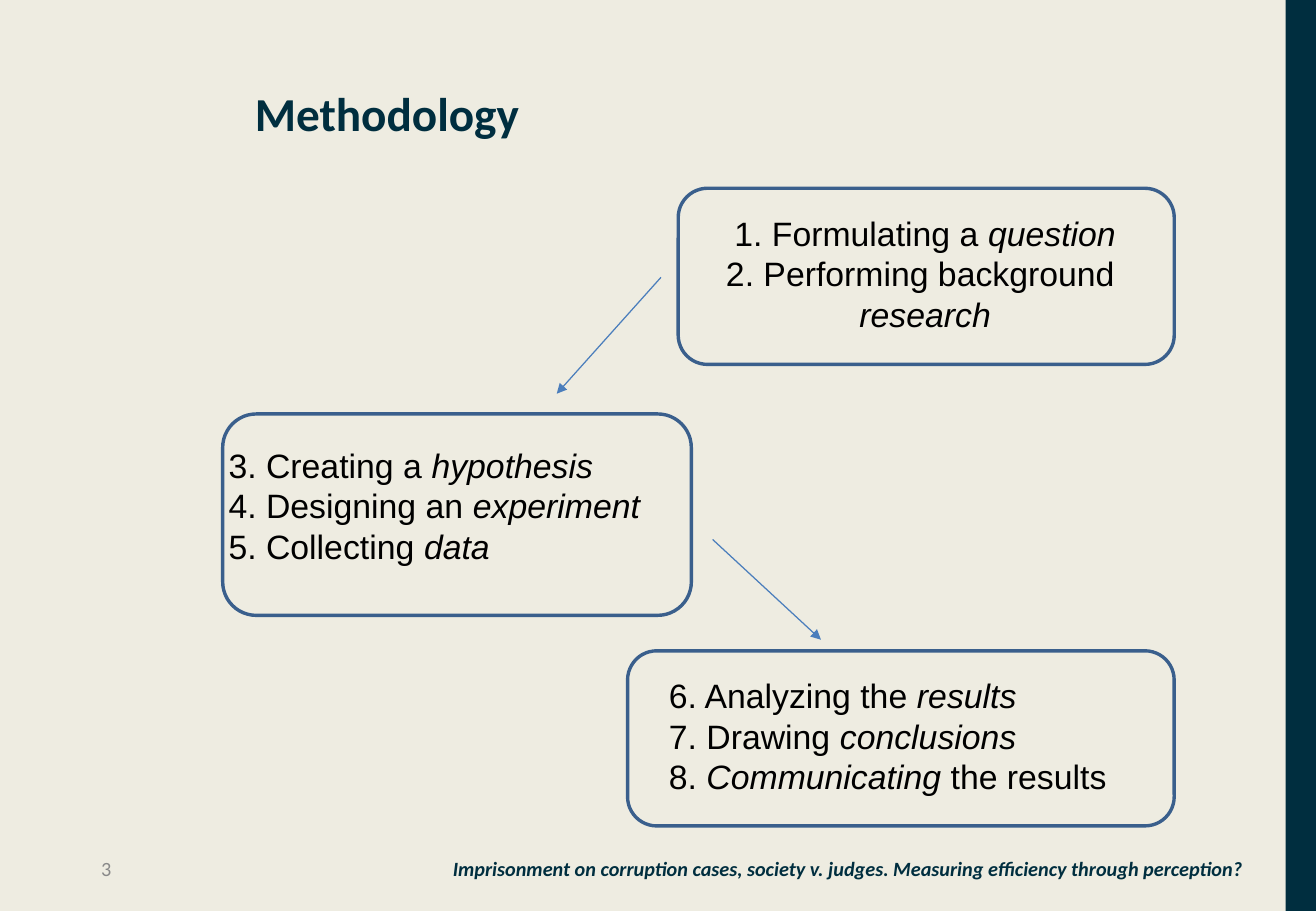
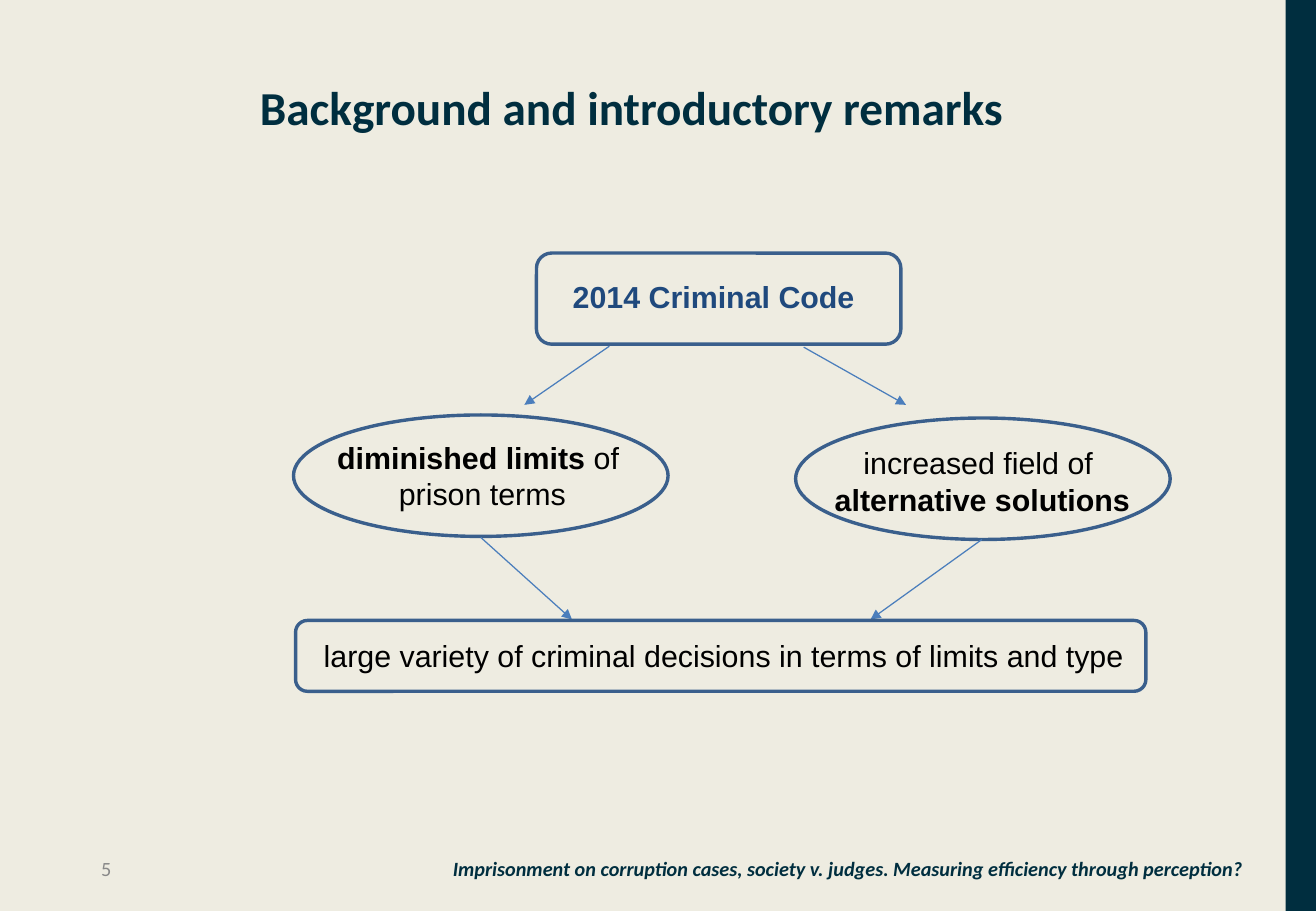
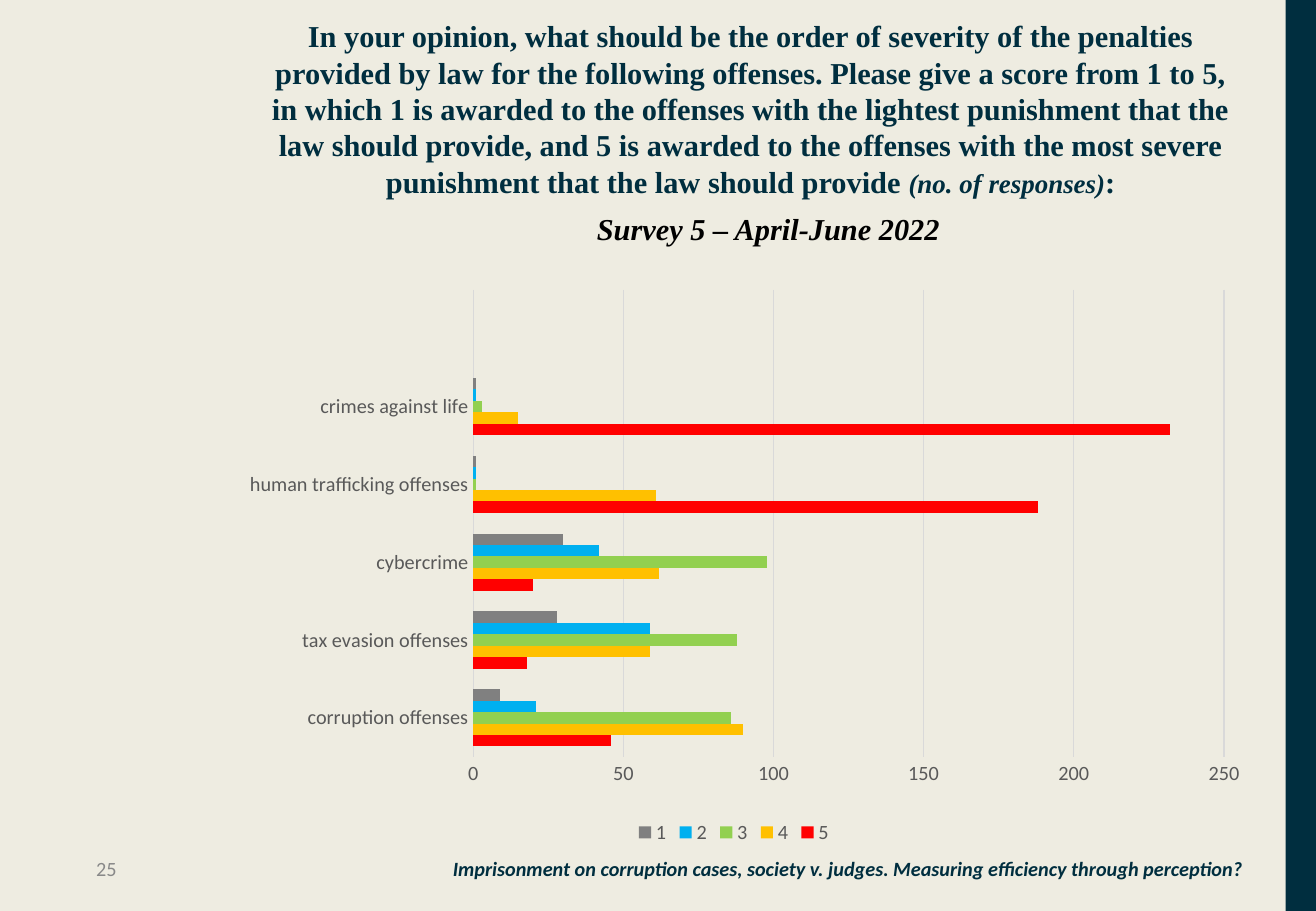
import pptx
import pptx.util
import pptx.chart.data
import pptx.dml.color
import pptx.enum.chart
import pptx.enum.shapes
import pptx.enum.text
import pptx.oxml.ns
import pptx.oxml.xmlchemy

RGB = pptx.dml.color.RGBColor
SAND = RGB(0xEE, 0xEC, 0xE1)
NAVY = RGB(0x00, 0x2E, 0x3F)
STEEL = RGB(0x3A, 0x5F, 0x8C)
BLUE = RGB(0x4B, 0x7E, 0xBC)
INK = RGB(0x1F, 0x49, 0x7D)
BLACK = RGB(0x00, 0x00, 0x00)
GREY = RGB(0x89, 0x89, 0x89)
SLATE = RGB(0x59, 0x59, 0x59)
PALE = RGB(0xD9, 0xD9, 0xD9)
RED = RGB(0xFF, 0x00, 0x00)
GOLD = RGB(0xFF, 0xC0, 0x00)
GREEN = RGB(0x92, 0xD0, 0x50)
SKY = RGB(0x00, 0xB0, 0xF0)
ASH = RGB(0x80, 0x80, 0x80)

SANS, BODY, SERIF = "Calibri", "Arial", "Times New Roman"
COLS, ROWS = 130, 90
CELL = pptx.util.Inches(1) // 12
FOOT = ("Imprisonment on corruption cases, society v. judges. "
        "Measuring efficiency through perception?")

Pt = pptx.util.Pt
SHAPE = pptx.enum.shapes.MSO_SHAPE
ALIGN = pptx.enum.text.PP_ALIGN
ANCHOR = pptx.enum.text.MSO_ANCHOR
qn = pptx.oxml.ns.qn
node = pptx.oxml.xmlchemy.OxmlElement


def grid(*cells):
    return [round(n * CELL) for n in cells]


class Deck:
    """Shared style and the current slide; lengths are grid cells."""

    def __init__(self):
        self.prs = pptx.Presentation()
        self.prs.slide_width, self.prs.slide_height = grid(COLS, ROWS)
        back = self.prs.slide_master.background.fill
        back.solid()
        back.fore_color.rgb = SAND

    def page(self, num):
        """Start a slide with its side band, number and footer."""
        self.slide = self.prs.slides.add_slide(self.prs.slide_layouts[6])
        self.shapes = self.slide.shapes
        band = self.shapes.add_shape(SHAPE.RECTANGLE, *grid(COLS - 3, 0, 3, ROWS))
        band.shadow.inherit = False
        band.fill.solid()
        band.fill.fore_color.rgb = NAVY
        band.line.fill.background()
        low = dict(size=12, font=SANS, mid=True, wrap=True)
        self.text((0, 83.4, 21, 4.8), [[(str(num), "")]],
                  color=GREY, align=ALIGN.CENTER, **low)
        self.text((24, 83.4, 100, 4.8), [[(FOOT, "bi")]],
                  color=NAVY, align=ALIGN.RIGHT, **low)

    def text(self, box, paras, size=18, font=BODY, color=BLACK,
             align=ALIGN.LEFT, mid=False, wrap=False):
        """Add paragraphs of runs (words, marks, own size if any)."""
        frame = self.shapes.add_textbox(*grid(*box)).text_frame
        frame.word_wrap = wrap
        frame.vertical_anchor = ANCHOR.MIDDLE if mid else ANCHOR.TOP
        for i, runs in enumerate(paras):
            para = frame.add_paragraph() if i else frame.paragraphs[0]
            para.alignment = align
            for words, marks, *own in runs:
                run = para.add_run()
                run.text = words
                self.style(run.font, own[0] if own else size, color, font)
                run.font.bold = "b" in marks
                run.font.italic = "i" in marks

    def style(self, face, size, color, font=SANS):
        face.size, face.name = Pt(size), font
        face.color.rgb = color

    def title(self, left, top, runs, size=28, font=SANS, align=ALIGN.LEFT):
        self.text((left, top, 99.5, 15), [runs], size, font, NAVY, align,
                  mid=True, wrap=True)

    def frame(self, box, kind=SHAPE.ROUNDED_RECTANGLE):
        """Add an unfilled outline."""
        shape = self.shapes.add_shape(kind, *grid(*box))
        shape.shadow.inherit = False
        shape.fill.background()
        shape.line.color.rgb = STEEL
        shape.line.width = Pt(2)

    def arrow(self, *ends):
        line = self.shapes.add_connector(
            pptx.enum.shapes.MSO_CONNECTOR.STRAIGHT, *grid(*ends))
        line.line.color.rgb = BLUE
        line.line.width = Pt(0.75)
        tip = node("a:tailEnd")
        tip.set("type", "triangle")
        props = line._element.spPr
        props.find(qn("a:ln")).append(tip)
        props.append(node("a:effectLst"))

    def bars(self, box, cats, rows, plot):
        """Add a bar chart; rows hold (name, color, values)."""
        data = pptx.chart.data.CategoryChartData()
        data.categories = cats
        for name, _, vals in rows:
            data.add_series(name, vals)
        chart = self.shapes.add_chart(
            pptx.enum.chart.XL_CHART_TYPE.BAR_CLUSTERED, *grid(*box), data).chart
        self.style(chart.font, 10, BLACK)
        chart.has_title = False
        chart.has_legend = True
        chart.legend.position = pptx.enum.chart.XL_LEGEND_POSITION.BOTTOM
        chart.legend.include_in_layout = False
        self.style(chart.legend.font, 12, SLATE)
        for axis in (chart.category_axis, chart.value_axis):
            self.style(axis.tick_labels.font, 12, SLATE)
            axis.major_tick_mark = pptx.enum.chart.XL_TICK_MARK.NONE
            axis.minor_tick_mark = pptx.enum.chart.XL_TICK_MARK.NONE
        chart.category_axis.has_major_gridlines = False
        chart.value_axis.has_major_gridlines = True
        for line in (chart.category_axis.format.line,
                     chart.value_axis.major_gridlines.format.line):
            line.color.rgb = PALE
            line.width = Pt(0.75)
        chart.value_axis.format.line.fill.background()
        group = chart.plots[0]
        group.gap_width = 182
        group.vary_by_categories = False
        for part, (_, color, _) in zip(group.series, rows):
            part.format.fill.solid()
            part.format.fill.fore_color.rgb = color
        self.place(chart, plot)

    def place(self, chart, plot):
        """Fix the inner plot area as shares of the chart."""
        area = chart._chartSpace.find(".//" + qn("c:plotArea"))
        for old in area.findall(qn("c:layout")):
            area.remove(old)
        lay = node("c:layout")
        man = node("c:manualLayout")
        lay.append(man)
        tags = ("layoutTarget", "xMode", "yMode", "x", "y", "w", "h")
        for tag, val in zip(tags, ("inner", "edge", "edge", *plot)):
            item = node("c:" + tag)
            item.set("val", str(val))
            man.append(item)
        area.insert(0, lay)


def method(deck):
    deck.page(3)
    deck.title(24, 3.6, [("Methodology", "b")])
    steps = [
        ((67, 18.6, 49, 17.4), (70.4, 20.4, 42, 16.9), ALIGN.CENTER,
         [[("1. Formulating a ", ""), ("question", "i")],
          [("2. Performing background ", "")],
          [("research", "i")]]),
        ((22, 40.9, 46.3, 19.9), (21.4, 43.3, 47.8, 16.9), ALIGN.LEFT,
         [[("3. Creating a ", ""), ("hypothesis", "i")],
          [("4. Designing an ", ""), ("experiment", "i")],
          [("5. Collecting ", ""), ("data", "i")]]),
        ((62, 64.3, 54, 17.3), (64.9, 66.1, 50.6, 16.9), ALIGN.LEFT,
         [[("6. Analyzing the ", ""), ("results", "i")],
          [("7. Drawing ", ""), ("conclusions", "i")],
          [("8. ", ""), ("Communicating", "i"), (" the results", "")]]),
    ]
    for edge, box, align, paras in steps:
        deck.text(box, paras, size=20, align=align)
        deck.frame(edge)
    deck.arrow(65.3, 27.4, 55, 38.9)
    deck.arrow(70.4, 53.3, 81.1, 63.2)


def remarks(deck):
    deck.page(5)
    deck.title(24.5, 3, [("Background and introductory remarks", "b")])
    deck.frame((53, 25, 36, 9))
    deck.text((55.4, 26.9, 30.5, 8.5), [[("2014 Criminal Code", "b")]], color=INK)
    deck.text((32, 42.8, 31.3, 8.5),
              [[("diminished limits ", "b"), ("of ", "")],
               [("prison terms", "")]], align=ALIGN.CENTER)
    deck.text((80.6, 43.3, 32.9, 8.5),
              [[("increased field of ", "")],
               [("alternative solutions", "b")]], align=ALIGN.CENTER)
    for left, top in ((29, 41), (78.6, 41.3)):
        deck.frame((left, top, 37, 12), SHAPE.OVAL)
    for ends in ((60.2, 34.2, 51.8, 40), (79.4, 34.3, 89.5, 40),
                 (47.5, 53.1, 56.5, 61.2), (97, 53.3, 86, 61.2)):
        deck.arrow(*ends)
    deck.text((30.8, 62.4, 82.2, 4.8),
              [[("large variety of criminal decisions in terms of "
                 "limits and type", "")]])
    deck.frame((29.2, 61.3, 84, 7))


def survey(deck):
    deck.page(25)
    cats = ["corruption offenses", "tax evasion offenses", "cybercrime",
            "human trafficking offenses", "crimes against life", ""]
    rows = [("5", RED, (46, 18, 20, 188, 232, None)),
            ("4", GOLD, (90, 59, 62, 61, 15, None)),
            ("3", GREEN, (86, 88, 98, 1, 3, None)),
            ("2", SKY, (21, 59, 42, 1, 1, None)),
            ("1", ASH, (9, 28, 30, 1, 1, None))]
    deck.bars((21, 26.9, 103, 57), cats, rows, (0.25, 0.03, 0.72, 0.81))
    deck.text((48, 20.2, 55.8, 4.8), [[("Survey 5 – April-June 2022", "bi")]],
              font=SERIF, align=ALIGN.CENTER, wrap=True)
    ask = ("In your opinion, what should be the order of severity of the "
           "penalties provided by law for the following offenses. Please give "
           "a score from 1 to 5, in which 1 is awarded to the offenses with "
           "the lightest punishment that the law should provide, and 5 is "
           "awarded to the offenses with the most severe punishment that the "
           "law should provide ")
    deck.title(24.4, 3.2, [(ask, "b"), ("(no. of responses)", "bi", 16), (":", "b")],
               size=18, font=SERIF, align=ALIGN.CENTER)


def main():
    deck = Deck()
    for build in (method, remarks, survey):
        build(deck)
    deck.prs.save("out.pptx")


if __name__ == "__main__":
    main()
